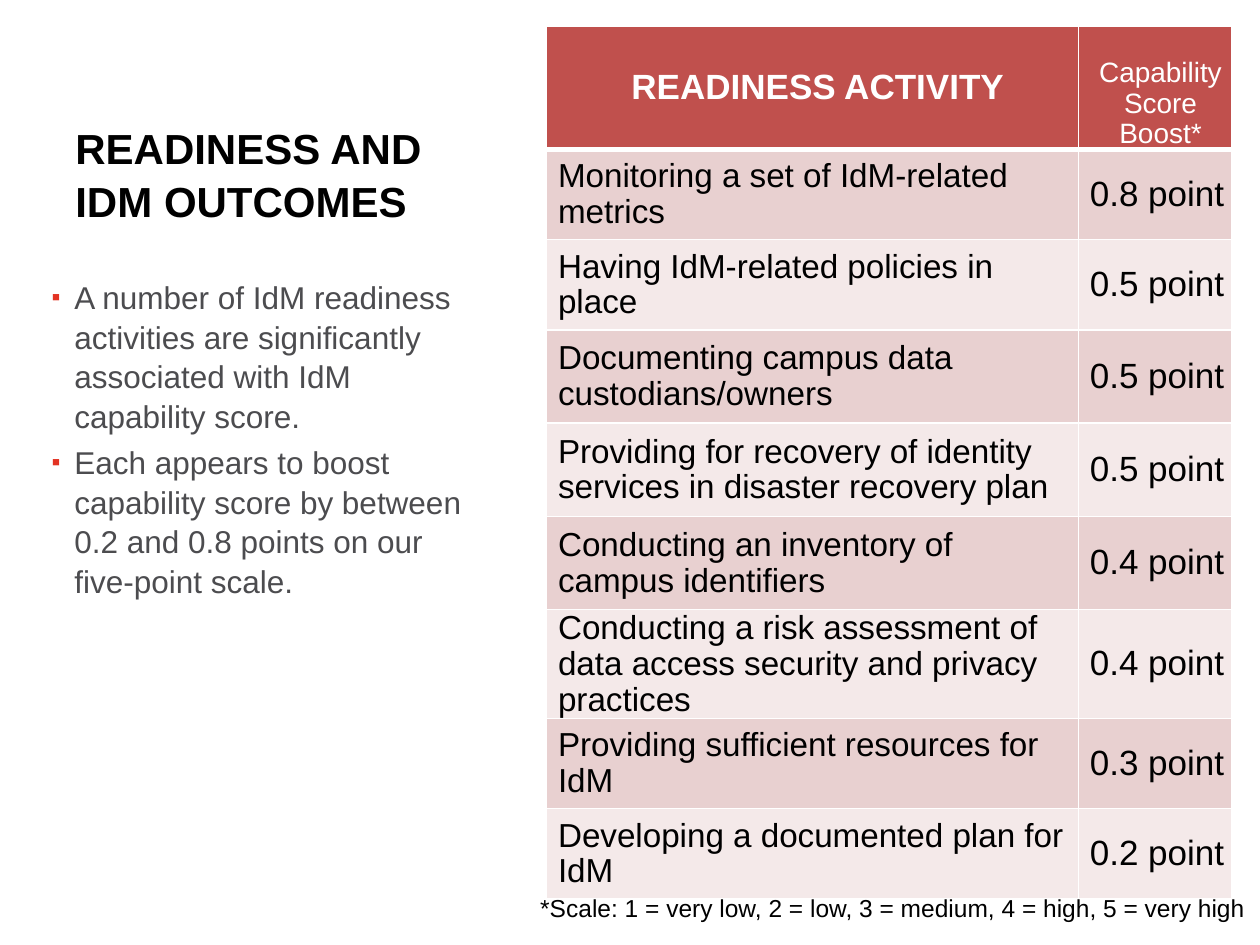
import lxml.etree
import pptx
import pptx.dml.color
import pptx.enum.text
import pptx.oxml.ns
import pptx.util

Cm = pptx.util.Cm
Pt = pptx.util.Pt
RGBColor = pptx.dml.color.RGBColor
Align = pptx.enum.text.PP_ALIGN
Anchor = pptx.enum.text.MSO_ANCHOR
AutoSize = pptx.enum.text.MSO_AUTO_SIZE
qn = pptx.oxml.ns.qn

WHITE = RGBColor(0xFF, 0xFF, 0xFF)
BLACK = RGBColor(0x00, 0x00, 0x00)
GRAY = RGBColor(0x4C, 0x4C, 0x4F)
BULLET_RED = RGBColor(0xE3, 0x33, 0x23)
HEADER_RED = RGBColor(0xC0, 0x50, 0x4D)
BAND_COLORS = (RGBColor(0xE8, 0xD0, 0xD0), RGBColor(0xF4, 0xE9, 0xE9))

COLUMN_WIDTHS = (Cm(10.72), Cm(3.1))
ROW_HEIGHTS = [Cm(height) for height in (2.48, 1.82, 1.82, 1.88, 1.88, 1.88, 1.88, 1.82, 1.82)]
ACTIVITIES = (
    ("Monitoring a set of IdM-related metrics", "0.8 point"),
    ("Having IdM-related policies in place", "0.5 point"),
    ("Documenting campus data custodians/owners", "0.5 point"),
    ("Providing for recovery of identity services in disaster recovery plan", "0.5 point"),
    ("Conducting an inventory of campus identifiers", "0.4 point"),
    ("Conducting a risk assessment of data access security and privacy practices", "0.4 point"),
    ("Providing sufficient resources for IdM", "0.3 point"),
    ("Developing a documented plan for IdM", "0.2 point"),
)
FINDINGS = (
    "A number of IdM readiness activities are significantly associated with IdM capability score.",
    "Each appears to boost capability score by between 0.2 and 0.8 points on our five-point scale.",
)


def write_text(para, text, size=18, color=BLACK, bold=False, align=Align.LEFT, spacing=1.0):
    para.alignment = align
    para.line_spacing = spacing
    span = para.add_run()
    span.text = text
    span.font.name = "Arial"
    span.font.size = Pt(size)
    span.font.bold = bold
    span.font.color.rgb = color


def add_bullet(para):
    properties = para._p.get_or_add_pPr()
    properties.set("marL", str(Cm(0.46)))
    properties.set("indent", str(-Cm(0.46)))
    color = lxml.etree.SubElement(properties, qn("a:buClr"))
    lxml.etree.SubElement(color, qn("a:srgbClr"), val=str(BULLET_RED))
    lxml.etree.SubElement(properties, qn("a:buSzPct"), val="80000")
    lxml.etree.SubElement(properties, qn("a:buFont"), typeface="Arial")
    lxml.etree.SubElement(properties, qn("a:buChar"), char="▪")


def add_box(page, left, top, width, height, wrap=True, anchor=Anchor.TOP):
    frame = page.shapes.add_textbox(left, top, width, height).text_frame
    frame.word_wrap = wrap
    frame.auto_size = AutoSize.NONE
    frame.vertical_anchor = anchor
    return frame


def set_borders(cell, bottom_width):
    properties = cell._tc.get_or_add_tcPr()
    sides = (("a:lnL", 1), ("a:lnR", 1), ("a:lnT", 1), ("a:lnB", bottom_width))
    for position, (side, width) in enumerate(sides):
        line = lxml.etree.Element(qn(side), w=str(Pt(width)))
        fill = lxml.etree.SubElement(line, qn("a:solidFill"))
        lxml.etree.SubElement(fill, qn("a:srgbClr"), val=str(WHITE))
        properties.insert(position, line)


def fill_cell(cell, text, fill, anchor=Anchor.MIDDLE, bottom_width=1, **text_format):
    cell.margin_left = Cm(0.23)
    cell.margin_top = cell.margin_right = Cm(0.02)
    cell.margin_bottom = 0
    cell.vertical_anchor = anchor
    cell.fill.solid()
    cell.fill.fore_color.rgb = fill
    set_borders(cell, bottom_width)
    write_text(cell.text_frame.paragraphs[0], text, spacing=0.97, **text_format)


def add_activity_table(page):
    table = page.shapes.add_table(
        len(ROW_HEIGHTS), len(COLUMN_WIDTHS),
        Cm(11.02), Cm(0.53), sum(COLUMN_WIDTHS), sum(ROW_HEIGHTS),
    ).table
    for column, width in zip(table.columns, COLUMN_WIDTHS):
        column.width = width
    for row, height in zip(table.rows, ROW_HEIGHTS):
        row.height = height
    header = {"fill": HEADER_RED, "color": WHITE, "align": Align.CENTER, "bottom_width": 3}
    fill_cell(table.cell(0, 0), "READINESS ACTIVITY", size=20, bold=True, **header)
    fill_cell(table.cell(0, 1), "Capability Score Boost*", size=16, anchor=Anchor.BOTTOM, **header)
    for index, (activity, boost) in enumerate(ACTIVITIES):
        band = BAND_COLORS[index % 2]
        fill_cell(table.cell(index + 1, 0), activity, band, size=19)
        fill_cell(table.cell(index + 1, 1), boost, band, size=20)


def add_findings(page):
    frame = add_box(page, Cm(0.79), Cm(5.44), Cm(9.27), Cm(6.55))
    for index, finding in enumerate(FINDINGS):
        para = frame.add_paragraph() if index else frame.paragraphs[0]
        if index:
            para.space_before = Pt(3.6)
        para.line_spacing = 1.05
        add_bullet(para)
        write_text(para, finding, color=GRAY, spacing=1.05)


def main():
    """Build the readiness and outcomes slide."""
    deck = pptx.Presentation()
    deck.slide_width, deck.slide_height = Cm(25.4), Cm(19.05)
    page = deck.slides.add_slide(deck.slide_layouts[6])
    add_activity_table(page)
    add_findings(page)
    note = add_box(page, Cm(10.64), Cm(17.88), Cm(14.78), Cm(0.86), wrap=False)
    write_text(note.paragraphs[0], "*Scale: 1 = very low, 2 = low, 3 = medium, 4 = high, 5 = very high", size=14)
    title = add_box(page, Cm(1.27), Cm(1.88), Cm(8.36), Cm(3.23), anchor=Anchor.MIDDLE)
    write_text(title.paragraphs[0], "READINESS AND IDM OUTCOMES", size=24, bold=True, spacing=1.05)
    deck.save("out.pptx")


if __name__ == "__main__":
    main()
